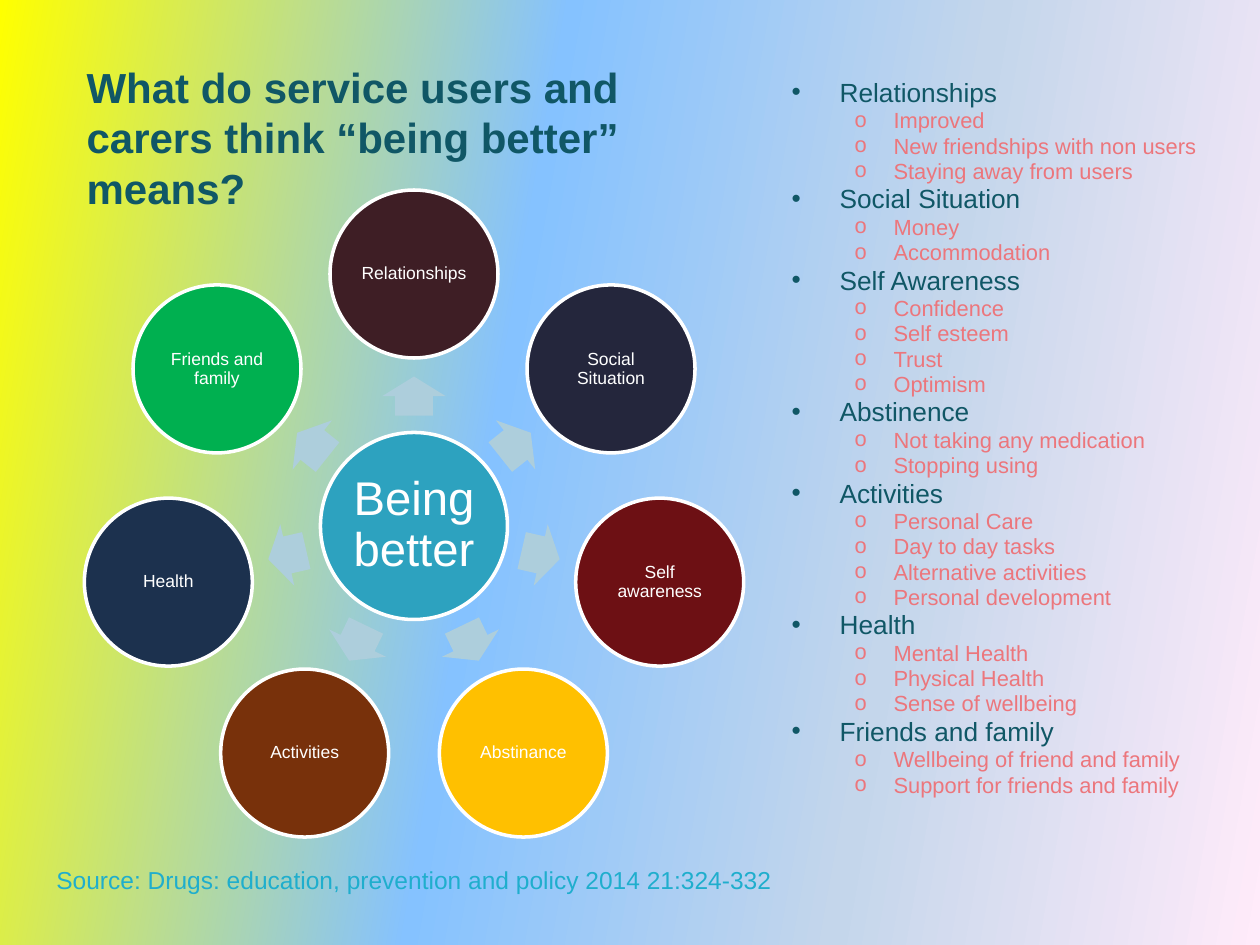
from math import cos, radians, sin

from lxml.etree import SubElement
from pptx import Presentation
from pptx.dml.color import RGBColor
from pptx.enum.shapes import MSO_SHAPE
from pptx.enum.text import MSO_ANCHOR, MSO_AUTO_SIZE, PP_ALIGN
from pptx.oxml.ns import qn
from pptx.util import Emu, Pt

SCALE = 914400 / 126
COLORS = {
    "heading": "105766", "detail": "EC767C", "source": "1FAECD",
    "white": "FFFFFF", "hub": "2DA2BF", "arrow": "ADCEDC",
}
BACKGROUND = [(0, "FFFF00"), (40, "85C2FF"), (70, "C4D6EB"), (100, "FFEBFA")]
THEMES = [
    ("Relationships", "3E1E25"), ("Social Situation", "24263C"),
    ("Self awareness", "6D1014"), ("Abstinance", "FFC000"),
    ("Activities", "78310B"), ("Health", "1C314E"),
    ("Friends and family", "00B050"),
]
OUTLINE = {
    "Relationships": ["Improved", "New friendships with non users",
                      "Staying away from users"],
    "Social Situation": ["Money", "Accommodation"],
    "Self Awareness": ["Confidence", "Self esteem", "Trust", "Optimism"],
    "Abstinence": ["Not taking any medication", "Stopping using"],
    "Activities": ["Personal Care", "Day to day tasks",
                   "Alternative activities", "Personal development"],
    "Health": ["Mental Health", "Physical Health", "Sense of wellbeing"],
    "Friends and family": ["Wellbeing of friend and family",
                           "Support for friends and family"],
}
LEVELS = [
    {"size": 15, "color": COLORS["heading"], "bullet": "•", "left": 48, "hang": 48},
    {"size": 12.5, "color": COLORS["detail"], "bullet": "o", "left": 102, "hang": 39},
]


def px(n):
    return Emu(round(n * SCALE))


def assign(target, values):
    for name, value in values.items():
        setattr(target, name, value)


class Deck:
    font = "Arial"

    def __init__(self, width, height):
        self.prs = Presentation()
        assign(self.prs, {"slide_width": px(width), "slide_height": px(height)})
        self.s = self.prs.slides.add_slide(self.prs.slide_layouts[1])

    def background(self, stops, angle):
        fill = self.s.background.fill
        fill.gradient()
        fill.gradient_angle = 360 - angle
        stop_list = self.s.element.find(".//" + qn("a:gsLst"))
        stop_list.clear()
        for position, color in stops:
            gs = SubElement(stop_list, qn("a:gs"), pos=str(position * 1000))
            SubElement(gs, qn("a:srgbClr"), val=color)

    def place(self, sp, box):
        assign(sp, dict(zip(("left", "top", "width", "height"), map(px, box))))

    def fill_paragraph(self, p, text, size, color, bold=False, **layout):
        assign(p, layout)
        r = p.add_run()
        r.text = text
        assign(r.font, {"name": self.font, "size": Pt(size), "bold": bold})
        r.font.color.rgb = RGBColor.from_string(color)

    def frame(self, sp, **values):
        tf = sp.text_frame
        assign(tf, {"word_wrap": True, "auto_size": MSO_AUTO_SIZE.NONE,
                    "vertical_anchor": MSO_ANCHOR.TOP, **values})
        return tf

    def title(self, text, box, size, color):
        sp = self.s.shapes.title
        self.place(sp, box)
        self.fill_paragraph(self.frame(sp).paragraphs[0], text, size, color, True,
                            alignment=PP_ALIGN.LEFT)

    def text(self, text, box, size, color):
        sp = self.s.shapes.add_textbox(*map(px, box))
        self.fill_paragraph(self.frame(sp).paragraphs[0], text, size, color)

    def outline(self, groups, box):
        sp = self.s.placeholders[1]
        self.place(sp, box)
        tf = self.frame(sp)
        items = [item for head, details in groups.items()
                 for item in [(0, head)] + [(1, d) for d in details]]
        for i, (level, text) in enumerate(items):
            p = tf.add_paragraph() if i else tf.paragraphs[0]
            style = LEVELS[level]
            self.fill_paragraph(p, text, style["size"], style["color"], level=level,
                                line_spacing=0.8, space_before=Pt(style["size"] * 0.2))
            pPr = p._p.get_or_add_pPr()
            pPr.set("marL", str(px(style["left"])))
            pPr.set("indent", str(px(-style["hang"])))
            SubElement(pPr, qn("a:buFont"), typeface=self.font)
            SubElement(pPr, qn("a:buChar"), char=style["bullet"])

    def shape(self, kind, cx, cy, width, height, color):
        box = (cx - width / 2, cy - height / 2, width, height)
        sp = self.s.shapes.add_shape(kind, *map(px, box))
        sp.shadow.inherit = False
        sp.fill.solid()
        sp.fill.fore_color.rgb = RGBColor.from_string(color)
        sp.line.fill.background()
        return sp

    def circle(self, text, cx, cy, diameter, color, size, inset):
        sp = self.shape(MSO_SHAPE.OVAL, cx, cy, diameter, diameter, color)
        sp.line.color.rgb = RGBColor.from_string(COLORS["white"])
        sp.line.width = Pt(2)
        sides = ("left", "top", "right", "bottom")
        tf = self.frame(sp, vertical_anchor=MSO_ANCHOR.MIDDLE,
                        **{f"margin_{side}": px(inset) for side in sides})
        self.fill_paragraph(tf.paragraphs[0], text, size, COLORS["white"],
                            alignment=PP_ALIGN.CENTER, line_spacing=0.9)

    def arrow(self, cx, cy, width, height, angle):
        sp = self.shape(MSO_SHAPE.RIGHT_ARROW, cx, cy, width, height, COLORS["arrow"])
        sp.adjustments[0] = 0.6
        sp.rotation = angle % 360

    def wheel(self, hub, themes, cx, cy):
        self.circle(hub, cx, cy, 187, COLORS["hub"], 27, 4)
        for i, (text, color) in enumerate(themes):
            angle = i * 360 / len(themes) - 90
            dx, dy = cos(radians(angle)), sin(radians(angle))
            self.arrow(cx + 130 * dx, cy + 130 * dy, 39, 63, angle)
            self.circle(text, cx + 252 * dx, cy + 252 * dy, 168, color, 10, 1)


def main():
    deck = Deck(1260, 945)
    deck.background(BACKGROUND, 10)
    deck.wheel("Being better", THEMES, 414, 526)
    deck.outline(OUTLINE, (779, 76, 446, 804))
    deck.text("Source: Drugs: education, prevention and policy 2014 21:324-332",
              (44, 859, 753, 43), 14, COLORS["source"])
    deck.title("What do service users and carers think “being better” means?",
               (74, 55, 674, 165), 24, COLORS["heading"])
    deck.prs.save("out.pptx")


if __name__ == "__main__":
    main()
